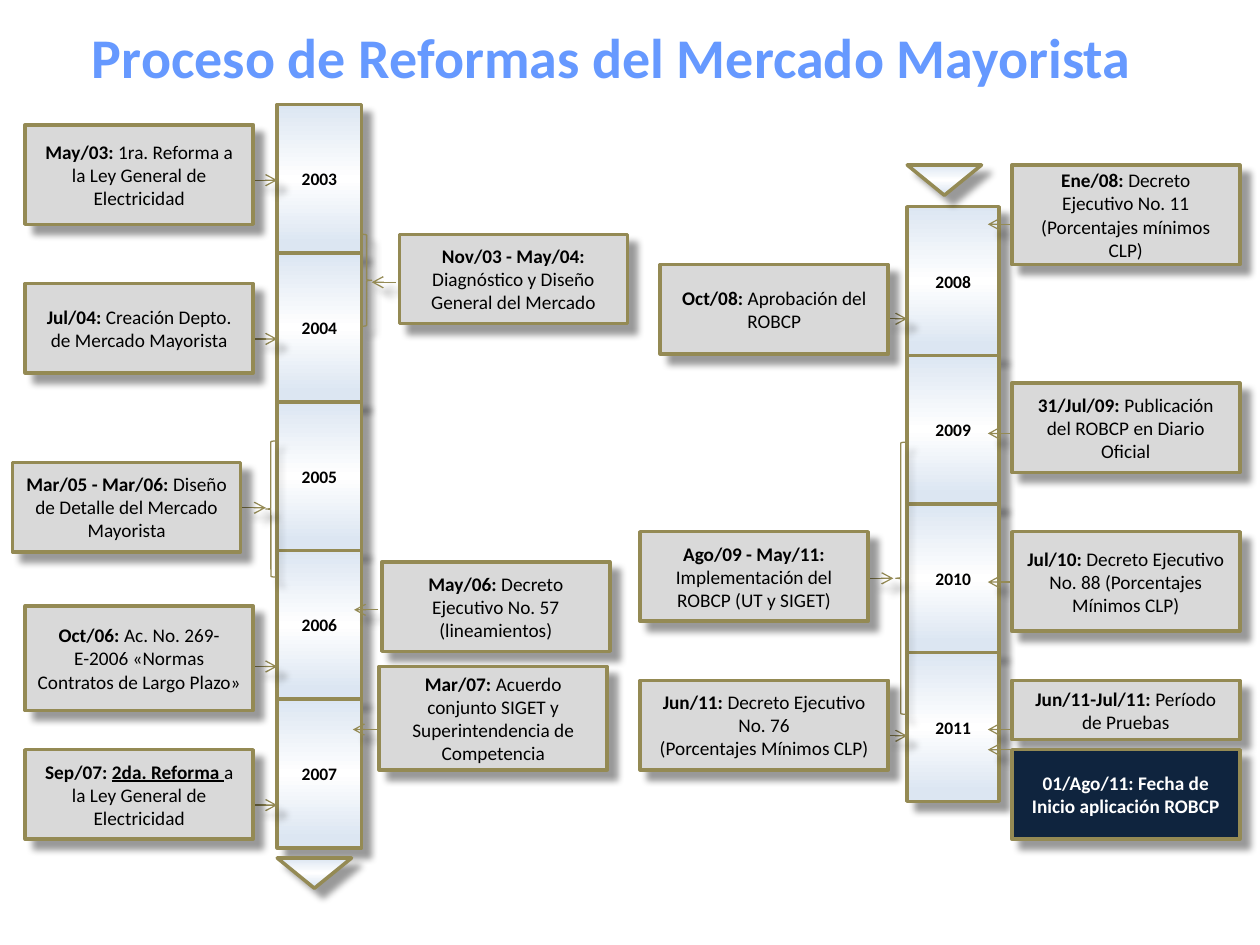
from dataclasses import dataclass

import lxml.etree
import pptx
import pptx.dml.color
import pptx.enum.shapes
import pptx.enum.text
import pptx.oxml
import pptx.oxml.ns
import pptx.util

Inches = pptx.util.Inches
Point = pptx.util.Pt
Shapes = pptx.enum.shapes.MSO_SHAPE
Align = pptx.enum.text.PP_ALIGN
Anchor = pptx.enum.text.MSO_ANCHOR

FONT = "Calibri"
COLORS = {
    "title": "6699FF",
    "edge": "948A54",
    "box": "D9D9D9",
    "launch": "0F243E",
    "text": "000000",
    "light": "FFFFFF",
    "band": "DCE6F2",
}
YEAR_HEIGHT = 1.18
BOX_WIDTH = 1.81
ARROW_LENGTH = 0.19


@dataclass
class Timeline:
    left: float
    top: float
    width: float
    years: range
    marker_top: float


@dataclass
class Bracket:
    left: float
    top: float
    height: float
    flipped: bool = False


@dataclass
class Milestone:
    left: float
    top: float
    height: float
    tip_x: float
    tip_y: float
    date: str
    body: str = ""
    underlined: str = ""
    second_line: str = ""
    width: float = BOX_WIDTH
    fill: str = "box"
    ink: str = "text"


TIMELINES = [
    Timeline(2.2, 0.83, 0.67, range(2003, 2008), 6.81),
    Timeline(7.2, 1.64, 0.73, range(2008, 2012), 1.31),
]
BRACKETS = [
    Bracket(2.87, 1.86, 0.73),
    Bracket(2.11, 3.5, 1.08, True),
    Bracket(7.11, 3.51, 2.16, True),
]
MILESTONES = [
    Milestone(0.2, 0.99, 0.79, 2.2, 1.43, "May/03: ", "1ra. Reforma a la Ley General de Electricidad"),
    Milestone(3.17, 1.86, 0.71, 2.95, 2.24, "Nov/03 - May/04: ", "Diagnóstico y Diseño General del Mercado"),
    Milestone(0.1, 3.67, 0.71, 2.11, 4.03, "Mar/05 - Mar/06: ", "Diseño de Detalle del Mercado Mayorista"),
    Milestone(0.2, 2.25, 0.71, 2.2, 2.69, "Jul/04: ", "Creación Depto. de Mercado Mayorista"),
    Milestone(3.03, 4.46, 0.71, 2.81, 4.84, "May/06: ", "Decreto Ejecutivo No. 57 (lineamientos)"),
    Milestone(0.2, 4.81, 0.83, 2.2, 5.29, "Oct/06: ", "Ac. No. 269-E-2006 «Normas Contratos de Largo Plazo»"),
    Milestone(3.01, 5.29, 0.82, 2.8, 5.79, "Mar/07: ", "Acuerdo conjunto SIGET y Superintendencia de Competencia"),
    Milestone(0.2, 5.95, 0.71, 2.2, 6.39, "Sep/07: ", "a la Ley General de Electricidad", underlined="2da. Reforma "),
    Milestone(5.24, 2.1, 0.71, 7.2, 2.53, "Oct/08: ", "Aprobación del ROBCP"),
    Milestone(8.03, 3.04, 0.71, 7.84, 3.44, "31/Jul/09: ", "Publicación del ROBCP en Diario Oficial"),
    Milestone(5.08, 4.22, 0.71, 7.09, 4.59, "Ago/09 - May/11: ", "Implementación del ROBCP (UT y SIGET)"),
    Milestone(8.03, 5.4, 0.47, 7.84, 5.79, "Jun/11-Jul/11: ", "Período de Pruebas"),
    Milestone(5.08, 5.4, 0.71, 7.2, 5.84, "Jun/11: ", "Decreto Ejecutivo No. 76",
              second_line="(Porcentajes Mínimos CLP)", width=1.97),
    Milestone(8.03, 5.95, 0.71, 7.84, 5.95, "01/Ago/11: Fecha de Inicio aplicación ROBCP",
              fill="launch", ink="light"),
    Milestone(8.03, 1.31, 0.79, 7.84, 1.78, "Ene/08: ", "Decreto Ejecutivo No. 11 (Porcentajes mínimos CLP)"),
    Milestone(8.03, 4.22, 0.79, 7.84, 4.62, "Jul/10: ", "Decreto Ejecutivo No. 88 (Porcentajes Mínimos CLP)"),
]


def color(name: str) -> pptx.dml.color.RGBColor:
    return pptx.dml.color.RGBColor.from_string(COLORS[name])


def shadow_effect(distance: float):
    return pptx.oxml.parse_xml(
        f'<a:effectLst {pptx.oxml.ns.nsdecls("a")}>'
        f'<a:outerShdw blurRad="{Point(4)}" dist="{Point(distance)}" dir="2700000" algn="tl" rotWithShape="0">'
        '<a:srgbClr val="000000"><a:alpha val="40000"/></a:srgbClr>'
        "</a:outerShdw></a:effectLst>"
    )


def outline(item, width: float, distance: float) -> None:
    item.line.color.rgb = color("edge")
    item.line.width = Point(width)
    item._element.spPr.append(shadow_effect(distance))


def add_shape(page, kind, left: float, top: float, width: float, height: float, line_width: float = 2):
    shape = page.shapes.add_shape(kind, Inches(left), Inches(top), Inches(width), Inches(height))
    outline(shape, line_width, 7)
    return shape


def fill_with_band(shape) -> None:
    shape.fill.gradient()
    shape.fill.gradient_angle = 270
    stops = shape._element.spPr.find(".//" + pptx.oxml.ns.qn("a:gsLst"))
    for stop in list(stops):
        stops.remove(stop)
    for position, name in ((0, "band"), (50, "light"), (93, "band")):
        stop = lxml.etree.SubElement(stops, pptx.oxml.ns.qn("a:gs"), pos=str(position * 1000))
        lxml.etree.SubElement(stop, pptx.oxml.ns.qn("a:srgbClr"), val=COLORS[name])


def format_paragraph(para, size: float, ink: str, align=Align.CENTER) -> None:
    para.alignment = align
    para.font.name = FONT
    para.font.size = Point(size)
    para.font.color.rgb = color(ink)


def add_span(para, text: str, bold: bool = False, underline: bool = False) -> None:
    span = para.add_run()
    span.text = text
    span.font.bold = bold
    if underline:
        span.font.underline = True


def add_title(page) -> None:
    title = page.shapes.title
    title.left, title.top, title.width, title.height = map(Inches, (0.63, 0.13, 8.74, 0.63))
    title.text_frame.vertical_anchor = Anchor.MIDDLE
    para = title.text_frame.paragraphs[0]
    format_paragraph(para, 32, "title", Align.LEFT)
    add_span(para, "Proceso de Reformas del Mercado Mayorista", bold=True)
    para.runs[0].font._element.append(shadow_effect(3))


def add_timeline(page, timeline: Timeline) -> None:
    for index, year in enumerate(timeline.years):
        top = timeline.top + index * YEAR_HEIGHT
        box = add_shape(page, Shapes.RECTANGLE, timeline.left, top, timeline.width, YEAR_HEIGHT)
        fill_with_band(box)
        box.text_frame.vertical_anchor = Anchor.MIDDLE
        para = box.text_frame.paragraphs[0]
        format_paragraph(para, 10, "text")
        add_span(para, str(year), bold=True)
    marker = add_shape(page, Shapes.FLOWCHART_MERGE, timeline.left, timeline.marker_top, 0.59, 0.24)
    fill_with_band(marker)


def add_bracket(page, bracket: Bracket) -> None:
    kind = Shapes.LEFT_BRACE if bracket.flipped else Shapes.RIGHT_BRACE
    shape = add_shape(page, kind, bracket.left, bracket.top, 0.08, bracket.height, 0.75)
    shape.fill.background()


def add_milestone(page, item: Milestone) -> None:
    side = 1 if item.left > item.tip_x else -1
    arrow = page.shapes.add_connector(
        pptx.enum.shapes.MSO_CONNECTOR.STRAIGHT,
        Inches(item.tip_x + side * ARROW_LENGTH), Inches(item.tip_y),
        Inches(item.tip_x), Inches(item.tip_y),
    )
    outline(arrow, 0.75, 8)
    lxml.etree.SubElement(arrow.line._get_or_add_ln(), pptx.oxml.ns.qn("a:tailEnd"), type="arrow")

    box = add_shape(page, Shapes.RECTANGLE, item.left, item.top, item.width, item.height)
    box.fill.solid()
    box.fill.fore_color.rgb = color(item.fill)
    frame = box.text_frame
    frame.word_wrap = True
    frame.vertical_anchor = Anchor.MIDDLE
    para = frame.paragraphs[0]
    format_paragraph(para, 11, item.ink)
    add_span(para, item.date, bold=True)
    if item.underlined:
        add_span(para, item.underlined, bold=True, underline=True)
    if item.body:
        add_span(para, item.body)
    if item.second_line:
        para = frame.add_paragraph()
        format_paragraph(para, 11, item.ink)
        add_span(para, item.second_line)


def main() -> None:
    deck = pptx.Presentation()
    deck.slide_width, deck.slide_height = Inches(10), Inches(7.5)
    page = deck.slides.add_slide(deck.slide_layouts[5])
    add_title(page)
    for timeline in TIMELINES:
        add_timeline(page, timeline)
    for bracket in BRACKETS:
        add_bracket(page, bracket)
    for item in MILESTONES:
        add_milestone(page, item)
    deck.save("out.pptx")


if __name__ == "__main__":
    main()
